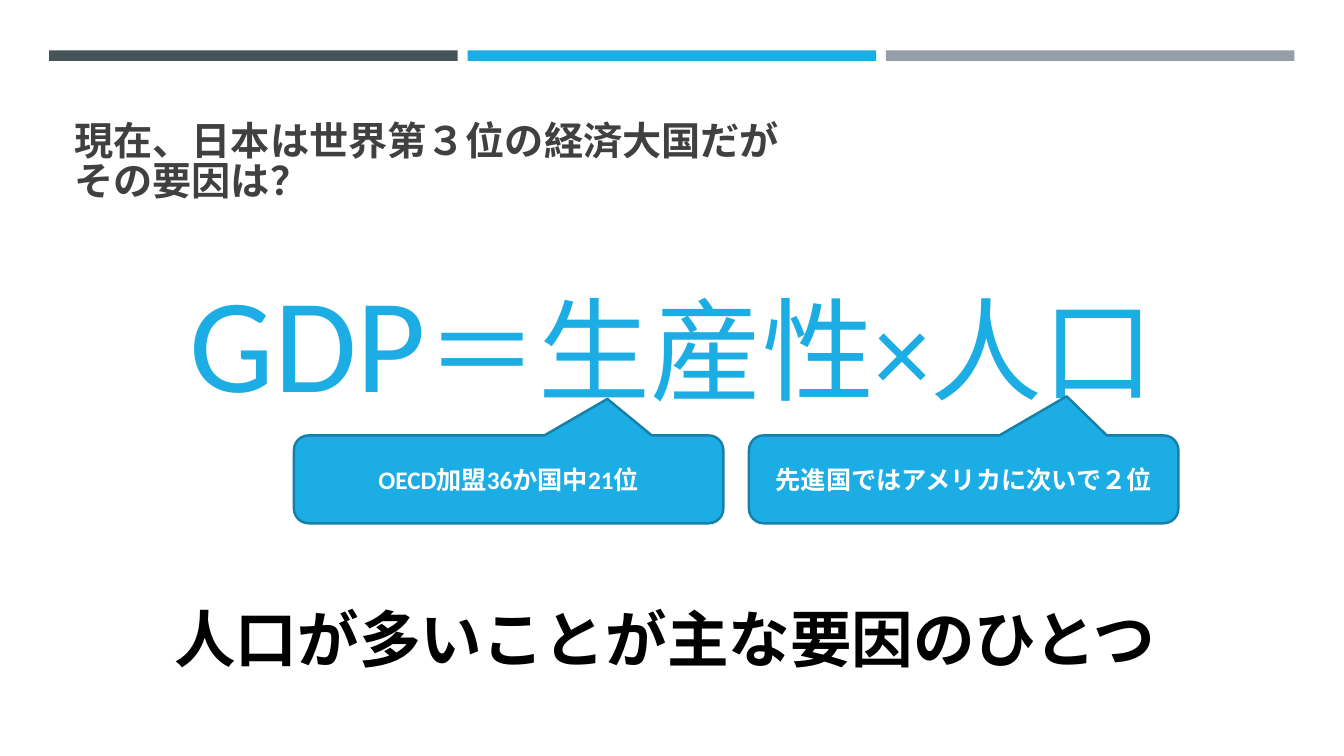
from dataclasses import dataclass

from lxml.etree import SubElement
from pptx import Presentation
from pptx.dml.color import RGBColor
from pptx.enum.shapes import MSO_SHAPE
from pptx.enum.text import MSO_ANCHOR, MSO_AUTO_SIZE, PP_ALIGN
from pptx.oxml.ns import qn
from pptx.util import Pt


@dataclass(frozen=True)
class Theme:
    latin: str = "Calibri"
    japanese: str = "Noto Sans CJK JP"
    accent: str = "1CADE4"
    outline: str = "1580A9"
    slate: str = "465359"
    gray: str = "969FA7"
    heading: str = "404040"
    black: str = "000000"
    white: str = "FFFFFF"
    title_size: int = 28
    gdp_size: int = 96
    formula_size: int = 80
    callout_size: int = 18
    conclusion_size: int = 44


T = Theme()


def format_run(r, size, color, bold=False, font=T.latin):
    r.font.size = Pt(size)
    r.font.bold = bold
    r.font.color.rgb = RGBColor.from_string(color)
    r.font.name = font
    SubElement(r.font._element, qn("a:ea")).set("typeface", T.japanese)


def add_box(s, x, y, w, h, wrap=True, anchor=MSO_ANCHOR.TOP):
    tf = s.shapes.add_textbox(Pt(x), Pt(y), Pt(w), Pt(h)).text_frame
    tf.word_wrap = wrap
    tf.vertical_anchor = anchor
    return tf


def add_filled(s, kind, x, y, w, h, color):
    sp = s.shapes.add_shape(kind, Pt(x), Pt(y), Pt(w), Pt(h))
    sp.shadow.inherit = False
    sp.fill.solid()
    sp.fill.fore_color.rgb = RGBColor.from_string(color)
    sp.line.fill.background()
    return sp


def add_title(s, text):
    tf = add_box(s, 46, 55.4, 868, 93.6, anchor=MSO_ANCHOR.BOTTOM)
    tf.text = text
    p = tf.paragraphs[0]
    p.line_spacing = 0.85
    for r in p.runs:
        format_run(r, T.title_size, T.heading, True, T.japanese)


def add_formula(s, parts):
    tf = add_box(s, 30, 180.7, 900, 123.8)
    tf.auto_size = MSO_AUTO_SIZE.SHAPE_TO_FIT_TEXT
    p = tf.paragraphs[0]
    p.alignment = PP_ALIGN.CENTER
    for text, size in parts:
        r = p.add_run()
        r.text = text
        format_run(r, size, T.accent)


def add_callout(s, x, text, tip_x, tip_y):
    sp = add_filled(s, MSO_SHAPE.ROUNDED_RECTANGULAR_CALLOUT, x, 311, 306.7, 62.8, T.accent)
    for i, value in enumerate((tip_x, tip_y, 0.167)):
        sp.adjustments[i] = value
    sp.line.color.rgb = RGBColor.from_string(T.outline)
    sp.line.width = Pt(1.75)
    tf = sp.text_frame
    tf.text = text
    tf.word_wrap = True
    tf.vertical_anchor = MSO_ANCHOR.MIDDLE
    p = tf.paragraphs[0]
    p.alignment = PP_ALIGN.CENTER
    format_run(p.runs[0], T.callout_size, T.white, True)


def add_conclusion(s, text):
    tf = add_box(s, 117.4, 425.5, 725.8, 60.5, wrap=False)
    tf.auto_size = MSO_AUTO_SIZE.SHAPE_TO_FIT_TEXT
    tf.text = text
    format_run(tf.paragraphs[0].runs[0], T.conclusion_size, T.black, True)


def main():
    prs = Presentation()
    prs.slide_width, prs.slide_height = Pt(960), Pt(540)
    s = prs.slides.add_slide(prs.slide_layouts[6])

    for i, color in enumerate((T.slate, T.accent, T.gray)):
        add_filled(s, MSO_SHAPE.RECTANGLE, 35.2 + 298.8 * i, 36, 291.8, 7.5, color)

    add_title(s, "現在、日本は世界第３位の経済大国だが\vその要因は？")
    add_formula(s, (("GDP", T.gdp_size), ("＝生産性×人口", T.formula_size)))
    add_callout(s, 535, "先進国ではアメリカに次いで２位", 0.24, -0.945)
    add_conclusion(s, "人口が多いことが主な要因のひとつ")
    add_callout(s, 210, "OECD加盟36か国中21位", 0.23, -0.915)

    prs.save("out.pptx")


if __name__ == "__main__":
    main()
